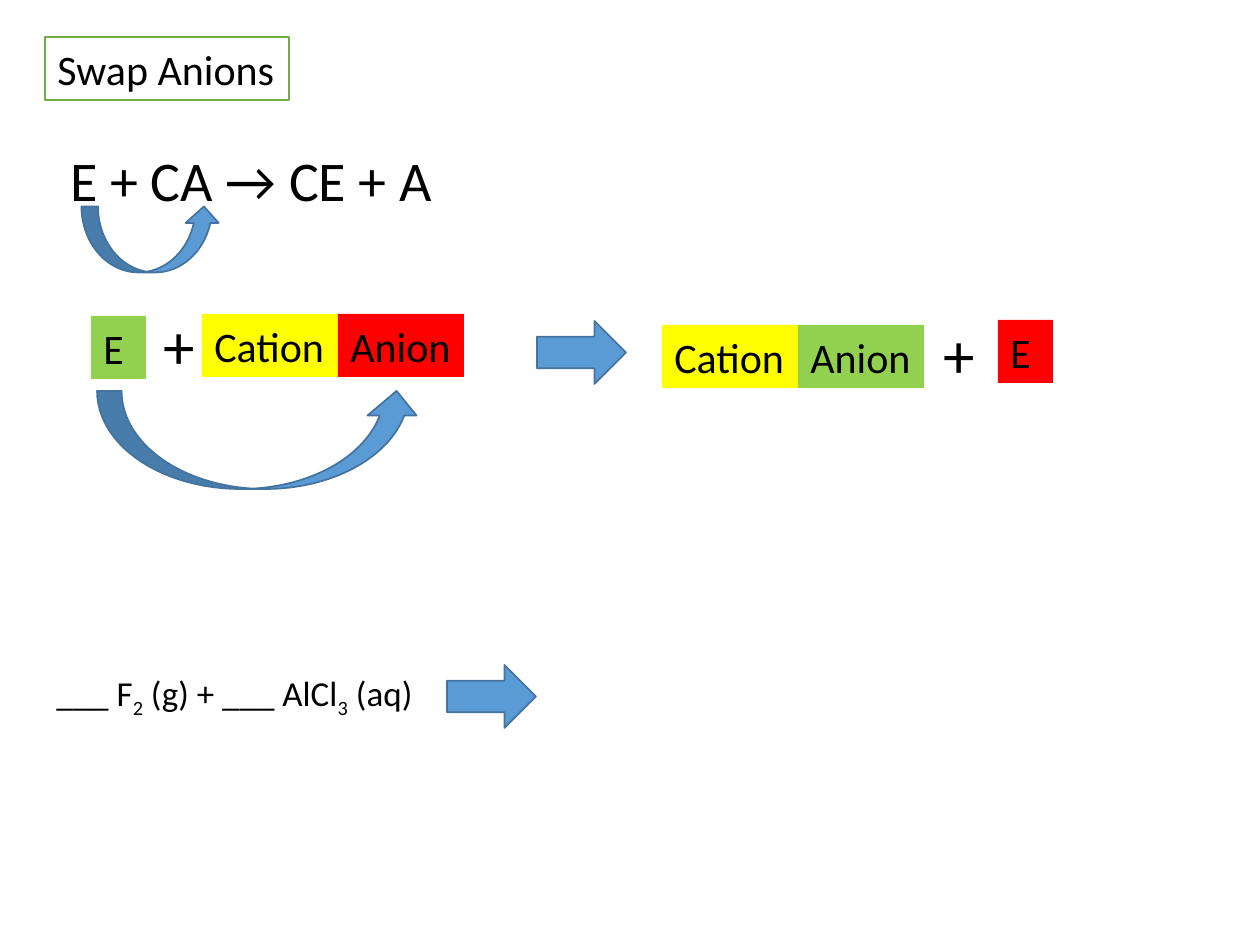
from pptx import Presentation
from pptx.dml.color import RGBColor
from pptx.enum.shapes import MSO_SHAPE
from pptx.enum.text import MSO_ANCHOR, MSO_AUTO_SIZE, PP_ALIGN
from pptx.util import Emu, Pt

RECTANGLE = MSO_SHAPE.RECTANGLE
RIGHT_ARROW = MSO_SHAPE.RIGHT_ARROW
CURVED_ARROW = MSO_SHAPE.CURVED_LEFT_ARROW

PX = 914400 / 126
FONT = "Calibri"
COLORS = {
    "text": "000000", "white": "FFFFFF", "title_line": "70AD47",
    "arrow": "5B9BD5", "arrow_line": "43739E",
    "green": "92D050", "yellow": "FFFF00", "red": "FF0000",
}
TILE_H = 63
TILE_W = {"E": 55, "Cation": 136, "Anion": 126}

# Content: positions and sizes in px
TITLE = ("Swap Anions", (45, 37, 244, TILE_H))
FORMULA = ("E + CA → CE + A", (58, 139, 392, 81))
EQUATION = ("___ F", "2", " (g) + ___ AlCl", "3", " (aq)")  # odd parts are subscripts
EQUATION_BOX = (44, 665, 402, 55)
# Rows of touching tiles: left, top, (word, colour) pairs
TILE_ROWS = [
    (91, 316, [("E", "green")]),
    (662, 325, [("Cation", "yellow"), ("Anion", "green")]),
    (202, 314, [("Cation", "yellow"), ("Anion", "red")]),
    (998, 320, [("E", "red")]),
]
PLUS_SIGNS = [(151, 300, 57, 89), (931, 309, 57, 89)]
REACTION_ARROWS = [(537, 321, 89, TILE_H), (447, 665, 89, TILE_H)]
SWAP_ARROWS = [(118, 170, 66, 139), (210, 278, 98, 324)]  # before rotation

prs = Presentation()
prs.slide_width, prs.slide_height = Emu(9144000), Emu(6858000)
slide = prs.slides.add_slide(prs.slide_layouts[6])


def emu(box):
    return [Emu(round(v * PX)) for v in box]


def color(name):
    return RGBColor.from_string(COLORS[name])


def write(holder, parts, size):
    frame = holder.text_frame
    frame.word_wrap = False
    frame.auto_size = MSO_AUTO_SIZE.SHAPE_TO_FIT_TEXT
    frame.vertical_anchor = MSO_ANCHOR.TOP
    paragraph = frame.paragraphs[0]
    paragraph.alignment = PP_ALIGN.LEFT
    for i, part in enumerate(parts):
        run = paragraph.add_run()
        run.text = part
        run.font.name, run.font.size = FONT, Pt(size)
        run.font.color.rgb = color("text")
        if i % 2:
            run._r.get_or_add_rPr().set("baseline", "-25000")


def add_text(parts, box, size):
    write(slide.shapes.add_textbox(*emu(box)), parts, size)


def add_filled(kind, box, fill, line=None):
    shape = slide.shapes.add_shape(kind, *emu(box))
    shape.shadow.inherit = False
    shape.fill.solid()
    shape.fill.fore_color.rgb = color(fill)
    if line:
        shape.line.color.rgb = color(line)
        shape.line.width = Pt(1)
    else:
        shape.line.fill.background()
    return shape


# Title and general formula
title, title_box = TITLE
write(add_filled(RECTANGLE, title_box, "white", "title_line"), [title], 24)
formula, formula_box = FORMULA
add_text([formula], formula_box, 32)

# Ion tiles
for left, top, tiles in TILE_ROWS:
    for word, fill in tiles:
        tile = add_filled(RECTANGLE, (left, top, TILE_W[word], TILE_H), fill)
        write(tile, [word], 24)
        left += TILE_W[word]

# Arrows
for box in REACTION_ARROWS:
    add_filled(RIGHT_ARROW, box, "arrow", "arrow_line")
for box in SWAP_ARROWS:
    swap = add_filled(CURVED_ARROW, box, "arrow", "arrow_line")
    swap.rotation = 270
    swap._element.spPr.xfrm.set("flipH", "1")

# Plus signs and practice equation
for box in PLUS_SIGNS:
    add_text(["+"], box, 36)
add_text(EQUATION, EQUATION_BOX, 20)

prs.save("out.pptx")
